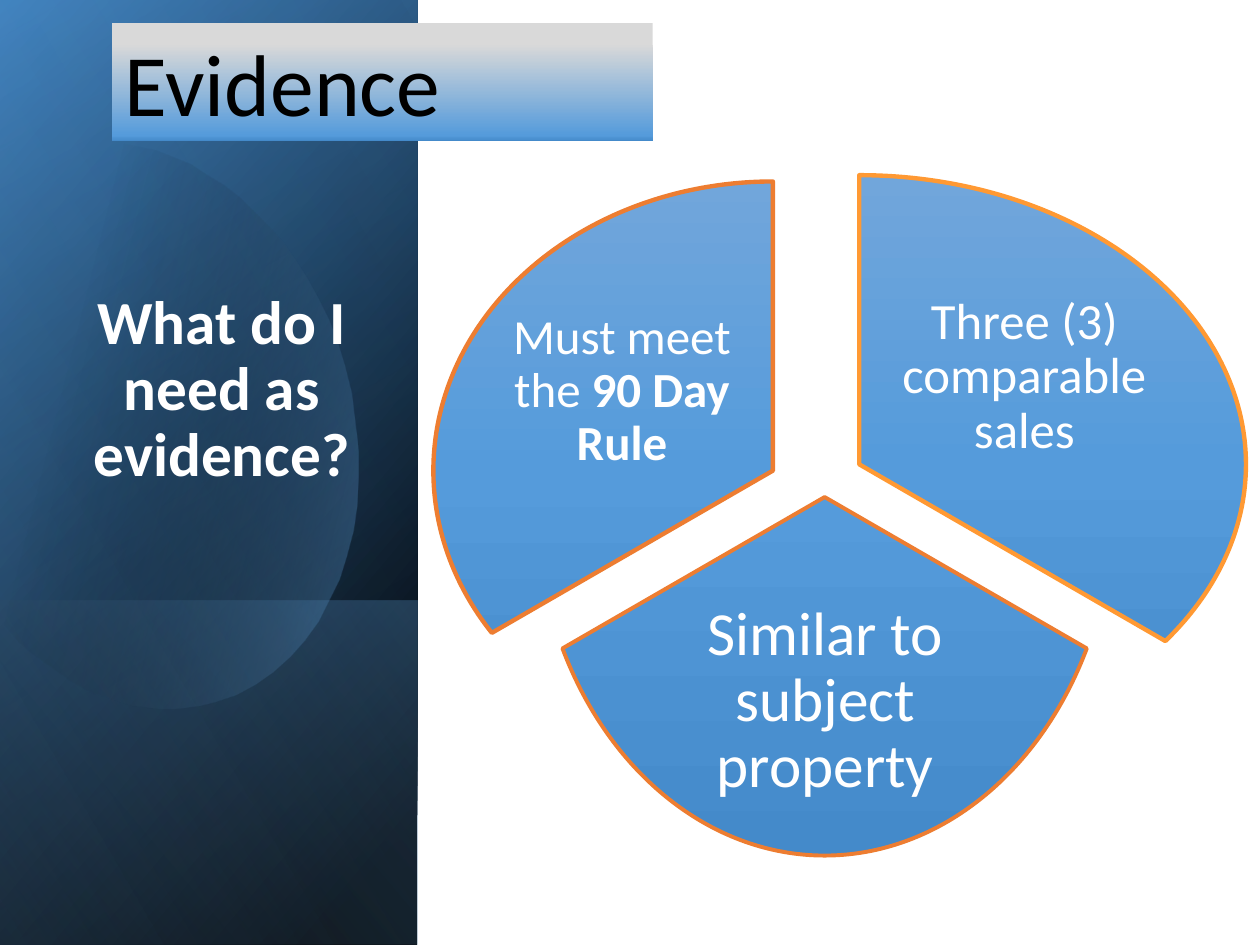
import pptx
import pptx.util
import pptx.dml.color
import pptx.enum.shapes
import pptx.enum.text
import pptx.oxml
import pptx.oxml.ns
import lxml.etree

Pt = pptx.util.Pt
qn = pptx.oxml.ns.qn
SHAPE = pptx.enum.shapes.MSO_SHAPE
ALIGN = pptx.enum.text.PP_ALIGN
ANCHOR = pptx.enum.text.MSO_ANCHOR

FONT = "Calibri"
WEDGE_STOPS = [(0, "71A6DB"), (50, "559BDB"), (100, "448ACA")]


def color(value):
    return pptx.dml.color.RGBColor.from_string(value)


def set_values(target, values):
    for name, value in values.items():
        setattr(target, name, value)


def fill_gradient(shape, stops, angle):
    """Fill with stops of (position, colour, optional opacity), in percent."""
    shape.shadow.inherit = False
    shape.fill.gradient()
    gradient = shape._element.spPr.find(qn("a:gradFill"))
    stop_list = gradient.find(qn("a:gsLst"))
    for old_stop in list(stop_list):
        stop_list.remove(old_stop)
    for position, value, *opacity in stops:
        stop = lxml.etree.SubElement(stop_list, qn("a:gs"), pos=str(position * 1000))
        tint = lxml.etree.SubElement(stop, qn("a:srgbClr"), val=value)
        for percent in opacity:
            lxml.etree.SubElement(tint, qn("a:alpha"), val=str(percent * 1000))
    gradient.find(qn("a:lin")).set("ang", str(angle * 60000))


def write_runs(paragraph, runs, size, value):
    """Add runs given as (text, bold)."""
    for text, bold in runs:
        run = paragraph.add_run()
        run.text = text
        set_values(run.font, {"name": FONT, "size": Pt(size), "bold": bold})
        run.font.color.rgb = color(value)


def add_turned_layer(slide, box, stops, angle):
    """Cover the box with a mirrored rectangle turned by 90 degrees."""
    left, top, width, height = box
    shift = (width - height) / 2
    layer = slide.shapes.add_shape(
        SHAPE.RECTANGLE, Pt(left + shift), Pt(top - shift), Pt(height), Pt(width))
    layer.rotation = 90
    layer._element.spPr.xfrm.set("flipH", "1")
    layer.line.fill.background()
    fill_gradient(layer, stops, angle)


def curve_points(start, controls, steps=16):
    """Points along a cubic curve, without its start."""
    points = [start, *controls]
    result = []
    for step in range(1, steps + 1):
        t = step / steps
        weights = ((1 - t) ** 3, 3 * t * (1 - t) ** 2, 3 * t ** 2 * (1 - t), t ** 3)
        result.append(tuple(sum(w * point[axis] for w, point in zip(weights, points))
                            for axis in (0, 1)))
    return result


def add_glow(slide, left, top):
    start = (69, 82)
    segments = [
        [(123, 88), (176, 138), (197, 209)],
        [(221, 297), (189, 382), (123, 401)],
        [(82, 413), (38, 396), (5, 360)],
        [(-2, 351)], [(-18, 120)], [(-11, 111)],
        [(1, 98), (16, 90), (32, 85)],
        [(45, 81), (57, 81), start],
    ]
    outline = [start]
    for segment in segments:
        outline += curve_points(outline[-1], segment) if len(segment) == 3 else segment
    outline = [(left + x, top + y) for x, y in outline]
    builder = slide.shapes.build_freeform(*outline[0], scale=Pt(1))
    builder.add_line_segments(outline[1:], close=True)
    glow = builder.convert_to_shape()
    glow.line.fill.background()
    fill_gradient(glow, [(29, "000000", 0), (100, "5B9BD5", 43)], 14)


def add_side_panel(slide, box):
    left, top, width, height = box
    lower_height = 197
    lower_box = (left, top + height - lower_height, width, lower_height)
    add_turned_layer(slide, box, [(8, "000000"), (100, "2E75B6")], 50)
    add_turned_layer(slide, box, [(0, "000000", 0), (99, "5B9BD5", 46)], 30)
    add_turned_layer(slide, lower_box, [(2, "5B9BD5", 29), (100, "000000", 30)], 130)
    add_glow(slide, left, top)
    add_turned_layer(slide, box, [(0, "000000", 0), (99, "9DC3E6", 11)], 120)


def add_question(slide, box):
    title = slide.shapes.title
    set_values(title, dict(zip(("left", "top", "width", "height"), map(Pt, box))))
    frame = title.text_frame
    set_values(frame, {"word_wrap": True, "vertical_anchor": ANCHOR.BOTTOM,
                       "auto_size": pptx.enum.text.MSO_AUTO_SIZE.NONE,
                       "margin_bottom": Pt(41)})
    paragraph = frame.paragraphs[0]
    set_values(paragraph, {"alignment": ALIGN.CENTER, "line_spacing": 0.9})
    write_runs(paragraph, [("What do I need as evidence?", True)], 35, "FFFFFF")
    # Move the title above the panel layers.
    slide.shapes._spTree.append(title._element)


def add_wedge(group, left, top, wedge):
    x, y, width, height = wedge["oval"]
    pie = group.shapes.add_shape(
        SHAPE.PIE, Pt(left + x), Pt(top + y), Pt(width), Pt(height))
    for index, degrees in enumerate(wedge["angles"]):
        pie.adjustments[index] = degrees * 0.6
    fill_gradient(pie, WEDGE_STOPS, 90)
    pie.line.width = Pt(wedge["line_width"])
    pie.line.color.rgb = color(wedge["line"])
    lxml.etree.SubElement(pie._element.spPr.find(qn("a:ln")), qn("a:round"))

    x, y, width, height = wedge["label"]
    label = group.shapes.add_textbox(Pt(left + x), Pt(top + y), Pt(width), Pt(height))
    frame = label.text_frame
    set_values(frame, {"word_wrap": True, "vertical_anchor": ANCHOR.MIDDLE})
    for side in ("left", "top", "right", "bottom"):
        setattr(frame, f"margin_{side}", Pt(3))
    paragraph = frame.paragraphs[0]
    set_values(paragraph, {"alignment": ALIGN.CENTER, "line_spacing": 0.9})
    write_runs(paragraph, wedge["runs"], wedge["size"], "FFFFFF")


def add_evidence_pie(slide, left, top):
    wedges = [
        {"oval": (22.3, 20.9, 442, 330.5), "angles": (270, 30),
         "line": "FF9933", "line_width": 2.5, "label": (262.8, 81.4, 149.8, 110.2),
         "runs": [("Three (3) comparable sales", False)], "size": 29},
        {"oval": (58.3, 0, 330.5, 409.7), "angles": (30, 150),
         "line": "ED7D31", "line_width": 2.25, "label": (149, 258.5, 149.8, 126.7),
         "runs": [("Similar to subject property", False)], "size": 35},
        {"oval": (0, 24.5, 388, 330.5), "angles": (150, 270),
         "line": "ED7D31", "line_width": 2.5, "label": (41.8, 89.3, 131.8, 110.2),
         "runs": [("Must meet the ", False), ("90 Day Rule", True)], "size": 28},
    ]
    group = slide.shapes.add_group_shape()
    for wedge in wedges:
        add_wedge(group, left, top, wedge)


def add_heading(slide, box):
    heading = slide.shapes.add_shape(SHAPE.RECTANGLE, *map(Pt, box))
    heading.line.fill.background()
    fill_gradient(heading, [(18, "D9D9D9"), (95, "559BDB"), (100, "448ACA")], 90)
    frame = heading.text_frame
    set_values(frame, {"word_wrap": True, "vertical_anchor": ANCHOR.TOP,
                       "auto_size": pptx.enum.text.MSO_AUTO_SIZE.SHAPE_TO_FIT_TEXT})
    paragraph = frame.paragraphs[0]
    paragraph.alignment = ALIGN.LEFT
    write_runs(paragraph, [("Evidence", False)], 50, "000000")


def main():
    presentation = pptx.Presentation()
    set_values(presentation, {"slide_width": Pt(720), "slide_height": Pt(540)})
    slide = presentation.slides.add_slide(presentation.slide_layouts[5])
    add_side_panel(slide, (0, 0, 238.5, 540))
    add_question(slide, (34.6, 132.5, 184.3, 188.6))
    add_evidence_pie(slide, 247.7, 79.2)
    add_heading(slide, (64, 13, 309, 67.7))
    presentation.save("out.pptx")


if __name__ == "__main__":
    main()
